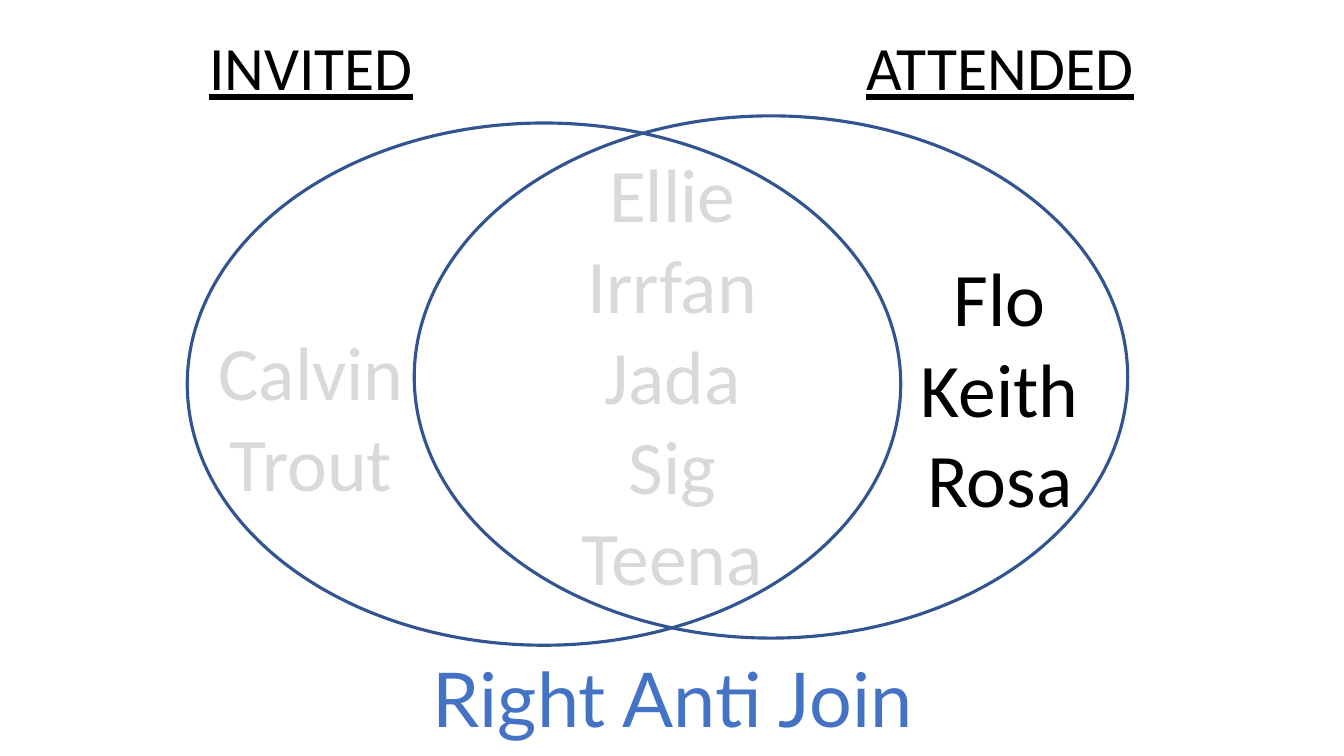
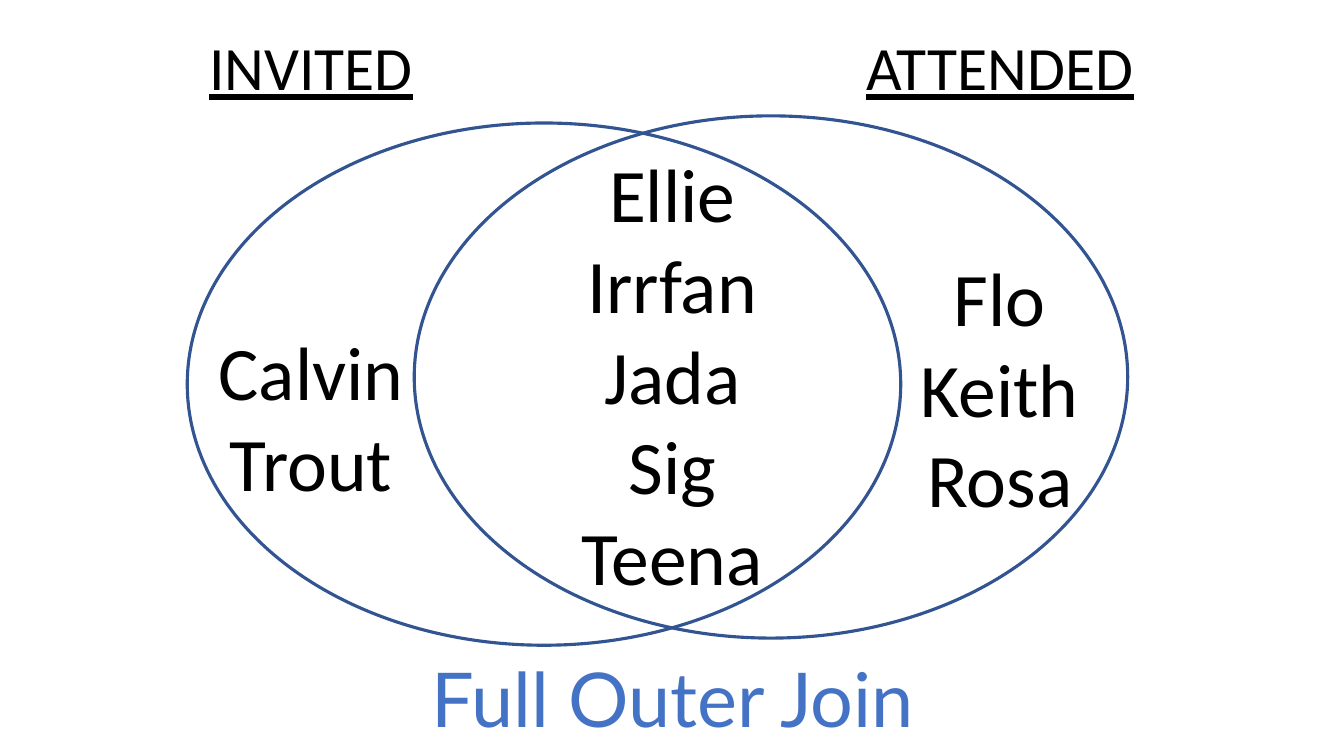
from pptx import Presentation
from pptx.dml.color import RGBColor
from pptx.enum.shapes import MSO_SHAPE
from pptx.enum.text import MSO_AUTO_SIZE, PP_ALIGN
from pptx.util import Cm, Pt

OVAL = MSO_SHAPE.OVAL
CENTER = PP_ALIGN.CENTER
FIT = MSO_AUTO_SIZE.SHAPE_TO_FIT_TEXT

# Shared style
BLACK, GREY, BLUE, EDGE = "000000", "D9D9D9", "4472C4", "325491"
HEAD, BODY = 44, 54
GAP = 52.8  # one heading line, in points

# Content: join name and the groups that it keeps
JOINS = [
    ("Right Anti Join", {"right"}),
    ("Full Outer Join", {"left", "both", "right"}),
]
# Group, heading, lines between heading and names, names, box in cm
GROUPS = [
    ("right", "ATTENDED", 2, ["Flo", "Keith", "Rosa"],
     (21.54, 0.61, 7.32, 12.83)),
    ("left", "INVITED", 3, ["Calvin", "Trout"],
     (4.98, 0.61, 5.72, 12.4)),
    ("both", None, 0, ["Ellie", "Irrfan", "Jada", "Sig", "Teena"],
     (14.38, 3.58, 5.13, 11.79)),
]
OVALS = [(4.72, 3.1, 17.98, 13.16), (10.44, 2.92, 17.98, 13.16)]
TITLE = (8.89, 16.31, 16.13, 2.57)


def color(code):
    return RGBColor.from_string(code)


def add_box(slide, box):
    frame = slide.shapes.add_textbox(*map(Cm, box)).text_frame
    frame.word_wrap = False
    frame.auto_size = FIT
    return frame


def add_line(frame, text, size=BODY, font="Calibri", ink=BLACK,
             under=False, before=0):
    first = frame.paragraphs[0]
    para = frame.add_paragraph() if first.runs else first
    para.alignment = CENTER
    para.space_before = Pt(before)
    run = para.add_run()
    run.text = text
    run.font.size = Pt(size)
    run.font.name = font
    run.font.underline = under
    run.font.color.rgb = color(ink)


def add_oval(slide, box):
    oval = slide.shapes.add_shape(OVAL, *map(Cm, box))
    oval.shadow.inherit = False
    oval.fill.background()
    oval.line.color.rgb = color(EDGE)
    oval.line.width = Pt(2.25)


def add_join(deck, title, kept):
    slide = deck.slides.add_slide(deck.slide_layouts[6])
    # Headings and names
    for group, head, skip, names, box in GROUPS:
        frame = add_box(slide, box)
        if head:
            add_line(frame, head, size=HEAD, under=True)
        ink = BLACK if group in kept else GREY
        for i, name in enumerate(names):
            add_line(frame, name, ink=ink, before=0 if i else skip * GAP)
    # Venn circles
    for box in OVALS:
        add_oval(slide, box)
    # Join name
    add_line(add_box(slide, TITLE), title, font="Lato", ink=BLUE)


def main():
    deck = Presentation()
    deck.slide_width, deck.slide_height = Cm(33.87), Cm(19.05)
    for title, kept in JOINS:
        add_join(deck, title, kept)
    deck.save("out.pptx")


if __name__ == "__main__":
    main()
